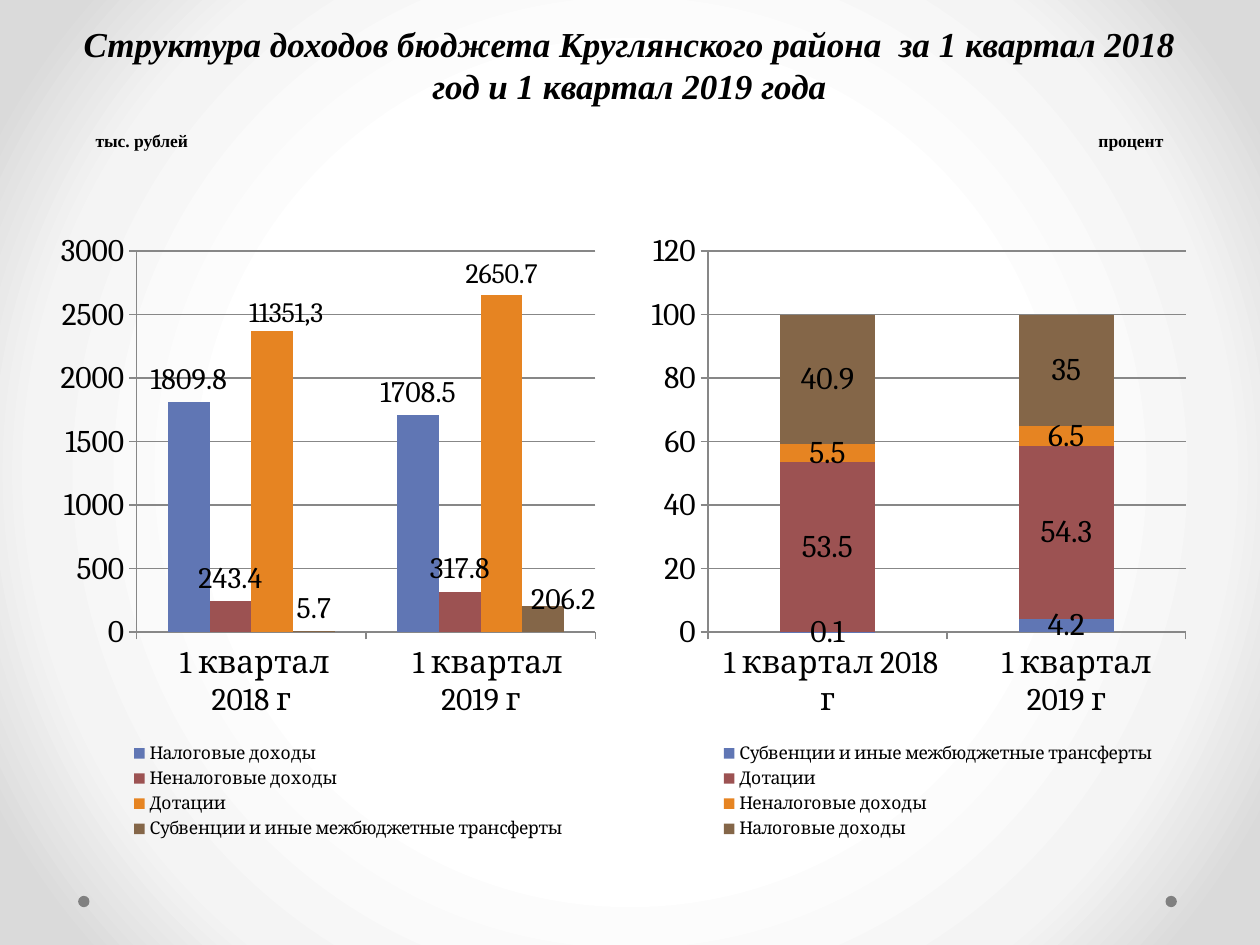
from lxml import etree
from pptx import Presentation
from pptx.chart.data import CategoryChartData
from pptx.dml.color import RGBColor
from pptx.enum.chart import XL_CHART_TYPE, XL_LABEL_POSITION, XL_LEGEND_POSITION, XL_TICK_MARK
from pptx.enum.shapes import MSO_SHAPE
from pptx.enum.text import MSO_AUTO_SIZE, PP_ALIGN
from pptx.oxml import parse_xml
from pptx.oxml.ns import nsdecls, qn
from pptx.util import Inches, Pt


def color(hex_string):
    return RGBColor.from_string(hex_string)


def manual_layout(inner=False, **fractions):
    """Return a c:layout element; fractions are x, y, w, h of the chart space."""
    layout = parse_xml(f"<c:layout {nsdecls('c')}><c:manualLayout/></c:layout>")
    settings = {"layoutTarget": "inner"} if inner else {}
    if "w" in fractions:
        settings.update(xMode="edge", yMode="edge")
    for tag, value in {**settings, **fractions}.items():
        etree.SubElement(layout[0], qn(f"c:{tag}")).set("val", str(value))
    return layout


prs = Presentation()
prs.slide_width, prs.slide_height = Inches(10), Inches(7.5)
slide = prs.slides.add_slide(prs.slide_layouts[5])

# Radial background
slide.background.fill.gradient()
gradient = slide.element.find(".//" + qn("a:gradFill"))
for child in list(gradient):
    gradient.remove(child)
stops = etree.SubElement(gradient, qn("a:gsLst"))
for percent, shade in [(50, "FFFFFF"), (76, "F4F4F4"), (92, "DADADA")]:
    stop = etree.SubElement(stops, qn("a:gs"), pos=str(percent * 1000))
    etree.SubElement(stop, qn("a:srgbClr"), val=shade)
circle = etree.SubElement(gradient, qn("a:path"), path="circle")
etree.SubElement(circle, qn("a:fillToRect"), l="50000", t="50000", r="50000", b="50000")

for left in (9.25, 0.62):
    dot = slide.shapes.add_shape(MSO_SHAPE.OVAL, Inches(left), Inches(7.11), Inches(0.09), Inches(0.09))
    dot.shadow.inherit = False
    dot.fill.solid()
    dot.fill.fore_color.rgb = color("808080")
    dot.line.fill.background()

# Title and units
title = slide.shapes.title
title.left, title.top, title.width, title.height = Inches(0.43), Inches(0.13), Inches(9.13), Inches(0.77)
title.text_frame.text = "Структура доходов бюджета Круглянского района  за 1 квартал 2018 год и 1 квартал 2019 года"
title.text_frame.auto_size = MSO_AUTO_SIZE.NONE
headings = [(title, 20, PP_ALIGN.CENTER)]
for unit, left, width, align in [("тыс. рублей", 0.59, 1.07, PP_ALIGN.CENTER),
                                 ("процент", 8.62, 0.94, PP_ALIGN.LEFT)]:
    unit_box = slide.shapes.add_textbox(Inches(left), Inches(0.98), Inches(width), Inches(0.27))
    unit_box.text_frame.word_wrap = True
    unit_box.text_frame.text = unit
    headings.append((unit_box, 10, align))
for heading, size, align in headings:
    paragraph = heading.text_frame.paragraphs[0]
    paragraph.alignment = align
    paragraph.font.name = "Times New Roman"
    paragraph.font.size = Pt(size)
    paragraph.font.bold = True
    paragraph.font.italic = heading is title
    paragraph.font.color.rgb = color("000000")

# Charts: left edge, type, overlap, label size, plot x and width, categories, series
TAX, NON_TAX, GRANTS = "Налоговые доходы", "Неналоговые доходы", "Дотации"
TRANSFERS = "Субвенции и иные межбюджетные трансферты"
SERIES_COLORS = ["6076B4", "9C5252", "E68422", "846648"]
chart_rows = [
    (5.08, XL_CHART_TYPE.COLUMN_STACKED, 100, 18, 0.122, 0.858,
     [" 1 квартал 2018 г", "   1 квартал 2019 г"],
     {TRANSFERS: (0.1, 4.2), GRANTS: (53.5, 54.3), NON_TAX: (5.5, 6.5), TAX: (40.9, 35)}),
    (0.4, XL_CHART_TYPE.COLUMN_CLUSTERED, 0, 17, 0.155, 0.824,
     [" 1 квартал 2018 г", "  1 квартал 2019 г"],
     {TAX: (1809.8, 1708.5), NON_TAX: (243.4, 317.8), GRANTS: (2367.4, 2650.7), TRANSFERS: (5.7, 206.2)}),
]
for left, kind, overlap, label_size, plot_x, plot_width, quarters, incomes in chart_rows:
    data = CategoryChartData()
    data.categories = quarters
    for income, amounts in incomes.items():
        data.add_series(income, amounts)
    chart = slide.shapes.add_chart(kind, Inches(left), Inches(1.75), Inches(4.42), Inches(4.95), data).chart
    chart.has_title = False
    chart.font.name = "Cambria"
    chart.font.size = Pt(18)
    chart.font.color.rgb = color("000000")

    chart.has_legend = True
    chart.legend.position = XL_LEGEND_POSITION.BOTTOM
    chart.legend.include_in_layout = False
    chart.legend.font.size = Pt(10)
    legend = chart.element.find(".//" + qn("c:legend"))
    plot_area = chart.element.find(".//" + qn("c:plotArea"))
    for part in (legend, plot_area):
        for old_layout in part.findall(qn("c:layout")):
            part.remove(old_layout)
    legend.insert(1, manual_layout(x=0.11, y=0.83, w=0.85, h=0.17))
    plot_area.insert(0, manual_layout(inner=True, x=plot_x, y=0.049, w=plot_width, h=0.611))

    for axis in (chart.category_axis, chart.value_axis):
        axis.major_tick_mark = XL_TICK_MARK.OUTSIDE
        axis.minor_tick_mark = XL_TICK_MARK.NONE
        axis.format.line.color.rgb = color("878787")
    chart.value_axis.has_major_gridlines = True
    chart.value_axis.major_gridlines.format.line.color.rgb = color("878787")

    plot = chart.plots[0]
    plot.gap_width, plot.overlap = 150, overlap
    plot.vary_by_categories = False
    for series, series_color in zip(plot.series, SERIES_COLORS):
        series.format.fill.solid()
        series.format.fill.fore_color.rgb = color(series_color)
        labels = series.data_labels
        labels.show_value = True
        labels.font.size = Pt(label_size)
        if kind == XL_CHART_TYPE.COLUMN_CLUSTERED:
            labels.position = XL_LABEL_POSITION.OUTSIDE_END

# Labels of the clustered chart that differ from the rest
grants, transfers = plot.series[2], plot.series[3]
grants.data_labels.font.size = Pt(16)
corrected = grants.points[0].data_label
corrected.text_frame.text = "11351,3"
corrected.text_frame.paragraphs[0].font.size = Pt(16)
shifted = transfers.points[1].data_label
shifted.font.size = Pt(17)
for label, number, point, dx, dy in [(corrected, 3, 0, 0.025, 0.005), (shifted, 4, 1, 0.036, 0.027)]:
    label.position = XL_LABEL_POSITION.OUTSIDE_END
    point_label = chart.element.xpath(f'.//c:ser[{number}]/c:dLbls/c:dLbl[c:idx/@val="{point}"]')[0]
    point_label.insert(1, manual_layout(x=dx, y=dy))

prs.save("out.pptx")
